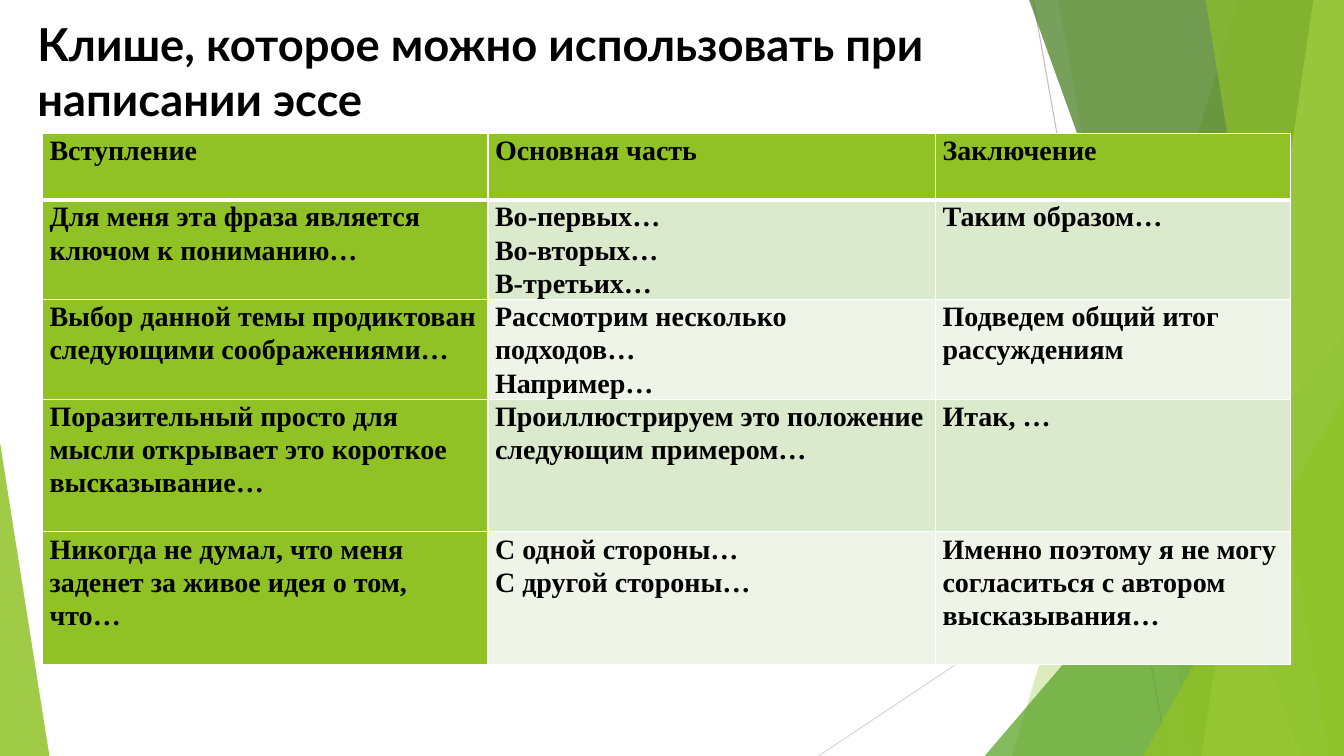
from lxml import etree
from pptx import Presentation
from pptx.dml.color import RGBColor
from pptx.enum import shapes as es, text as et
from pptx.oxml import parse_xml
from pptx.oxml.ns import qn
from pptx.util import Pt

WIDTH, HEIGHT = 960, 540
GREEN, WHITE, BLACK = "90C226", "FFFFFF", "000000"
BANDS = ["DBE9CD", "EEF4E8"]
LEAF = 23.7  # height of one text line in the table
COLS = [318.24, 319.68, 253.44]
LINES = [2, 3, 3, 4, 4]

TITLE = "Клише, которое можно использовать при написании эссе"
ROWS = [
    ["Вступление", "Основная часть", "Заключение"],
    ["Для меня эта фраза является ключом к пониманию…",
     "Во-первых…\nВо-вторых…\nВ-третьих…",
     "Таким образом…"],
    ["Выбор данной темы продиктован следующими соображениями…",
     "Рассмотрим несколько подходов…\nНапример…",
     "Подведем общий итог рассуждениям"],
    ["Поразительный просто для мысли открывает это короткое высказывание…",
     "Проиллюстрируем это положение следующим примером…",
     "Итак, …"],
    ["Никогда не думал, что меня заденет за живое идея о том, что…",
     "С одной стороны…\nС другой стороны…",
     "Именно поэтому я не могу согласиться с автором высказывания…"],
]

# Lines: start, end, colour
RAYS = [((738, 0), (834, 540), "BFBFBF"), ((960, 290), (584.6, 540), "D9D9D9")]
# Shards: top left x, bottom left x, colour, opacity
# Wedges: left, top, width, apex position, colour, opacity
FACETS = [
    ("shard", 884.2, 722.9, GREEN, 30),
    ("shard", 756, 851.8, GREEN, 20),
    ("wedge", 703.4, 239.8, 256.6, 1, "54A021", 72),
    ("shard", 735.1, 929.5, "3F7819", 70),
    ("shard", 938.2, 858.2, "C0E474", 70),
    ("shard", 861.1, 949, GREEN, 65),
    ("wedge", 816.5, 283, 143.5, 1, GREEN, 80),
    ("wedge", 0, 316.1, 35.3, 0, GREEN, 85),
]


def paint(color, hue):
    color.rgb = RGBColor.from_string(hue)


def style(item, **values):
    for name, value in values.items():
        setattr(item, name, value)


def tint(shape, hue, alpha):
    """Fill with a see-through colour, no outline and no shadow."""
    shape.shadow.inherit = False
    shape.line.fill.background()
    shape.fill.solid()
    paint(shape.fill.fore_color, hue)
    node = shape.fill._xPr.find(".//" + qn("a:srgbClr"))
    etree.SubElement(node, qn("a:alpha"), val=str(alpha * 1000))


def draw_ray(slide, start, end, hue):
    ends = [Pt(v) for v in start + end]
    ray = slide.shapes.add_connector(es.MSO_CONNECTOR.STRAIGHT, *ends)
    ray.line.width = Pt(0.75)
    paint(ray.line.color, hue)
    etree.SubElement(ray._element.spPr, qn("a:effectLst"))


def draw_shard(slide, box, high, low, hue, alpha):
    left, top, width, height = box
    right, base = left + width, top + height
    pen = slide.shapes.build_freeform(Pt(left + high), Pt(top))
    rest = [(right, top), (right, base), (left + low, base)]
    pen.add_line_segments([(Pt(x), Pt(y)) for x, y in rest])
    tint(pen.convert_to_shape(), hue, alpha)


def draw_wedge(slide, box, x, y, wide, apex, hue, alpha):
    left, top, _, height = box
    wedge = slide.shapes.add_shape(
        es.MSO_SHAPE.ISOSCELES_TRIANGLE,
        Pt(left + x), Pt(top + y), Pt(wide), Pt(height - y))
    wedge.adjustments[0] = apex
    tint(wedge, hue, alpha)


def draw_decor(slide, box):
    left, top = box[:2]
    for start, end, hue in RAYS:
        ends = [(left + x, top + y) for x, y in (start, end)]
        draw_ray(slide, *ends, hue)
    draw = {"shard": draw_shard, "wedge": draw_wedge}
    for kind, *facet in FACETS:
        draw[kind](slide, box, *facet)


def draw_title(slide, box):
    title = slide.shapes.title
    left, top, width, height = map(Pt, box)
    style(title, left=left, top=top, width=width, height=height)
    title.text = TITLE
    style(title.text_frame, word_wrap=True, auto_size=et.MSO_AUTO_SIZE.NONE,
          vertical_anchor=et.MSO_ANCHOR.TOP)
    line = title.text_frame.paragraphs[0]
    line.alignment = et.PP_ALIGN.LEFT
    style(line.font, name="Lato", size=Pt(32.4), bold=True)
    paint(line.font.color, BLACK)
    title._element.getparent().append(title._element)


def edge_cell(cell, widths):
    """Add white borders; widths maps a side (L, R, T, B) to points."""
    space = "http://schemas.openxmlformats.org/drawingml/2006/main"
    for side, width in widths.items():
        cell._tc.get_or_add_tcPr().append(parse_xml(
            f'<a:ln{side} xmlns:a="{space}" w="{Pt(width)}"><a:solidFill>'
            f'<a:srgbClr val="{WHITE}"/></a:solidFill></a:ln{side}>'))


def fill_cell(cell, words, row, col):
    edge_cell(cell, {"L": 1, "R": 1, "T": 3 if row == 1 else 1,
                     "B": 3 if row == 0 else 1})
    cell.fill.solid()
    plain = row > 0 and col > 0
    paint(cell.fill.fore_color, BANDS[(row - 1) % 2] if plain else GREEN)
    style(cell, margin_left=Pt(5), margin_right=Pt(5),
          margin_top=0, margin_bottom=0, text=words)
    for line in cell.text_frame.paragraphs:
        line.line_spacing = 1.07
        style(line.font, name="Times New Roman", size=Pt(20), bold=True)
        paint(line.font.color, BLACK)


def draw_table(slide, left, top):
    frame = slide.shapes.add_table(
        len(ROWS), len(COLS), Pt(left), Pt(top),
        Pt(sum(COLS)), Pt(sum(LINES) * LEAF))
    table = frame.table
    for col, width in zip(table.columns, COLS):
        col.width = Pt(width)
    for row, count in zip(table.rows, LINES):
        row.height = Pt(count * LEAF)
    for r, row in enumerate(ROWS):
        for c, words in enumerate(row):
            fill_cell(table.cell(r, c), words, r, c)


def main():
    deck = Presentation()
    style(deck, slide_width=Pt(WIDTH), slide_height=Pt(HEIGHT))
    slide = deck.slides.add_slide(deck.slide_layouts[5])
    draw_decor(slide, (0, 0, WIDTH, HEIGHT))
    draw_title(slide, (19.5, 8, 677, 104))
    draw_table(slide, 30.4, 95.3)
    deck.save("out.pptx")


if __name__ == "__main__":
    main()
